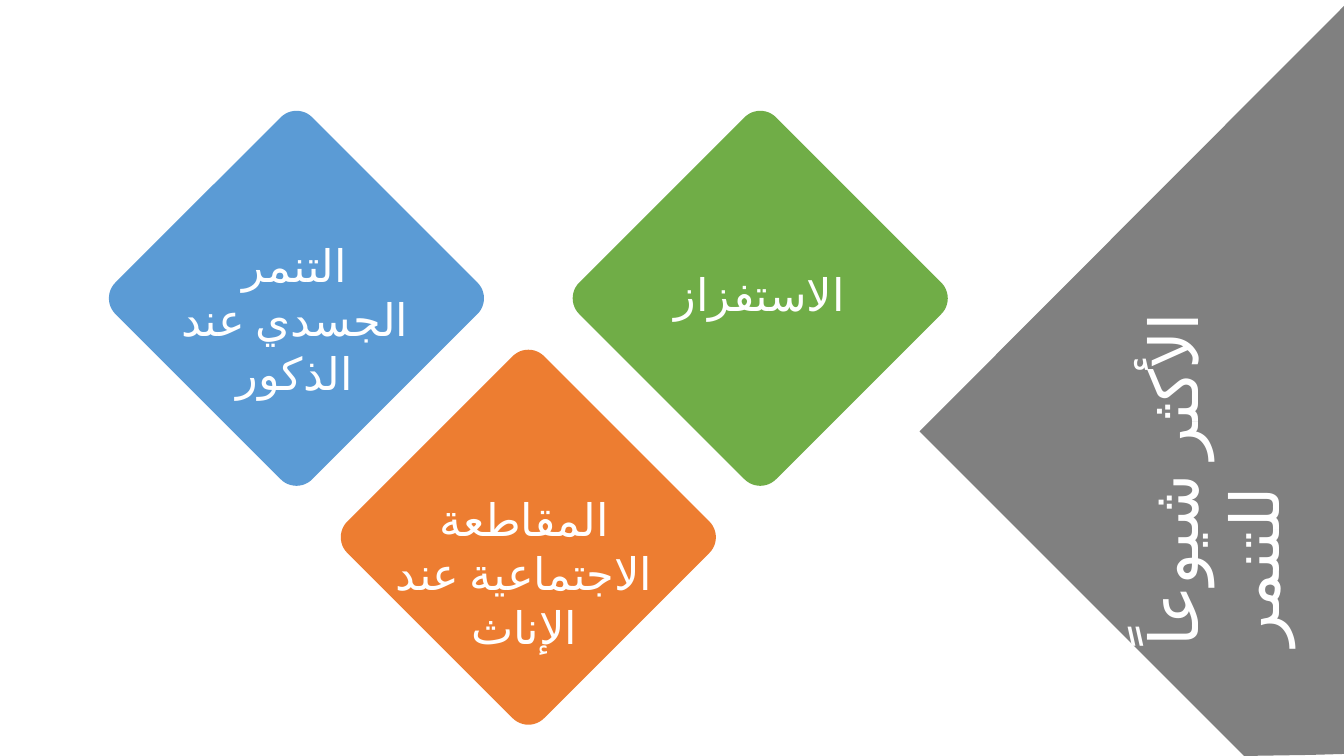
from lxml.etree import SubElement
from pptx import Presentation
from pptx.dml.color import RGBColor
from pptx.enum.lang import MSO_LANGUAGE_ID
from pptx.enum.shapes import MSO_SHAPE
from pptx.enum.text import MSO_AUTO_SIZE, PP_ALIGN
from pptx.oxml.ns import qn
from pptx.util import Pt

EMU_PER_PX = 9144
FONT = "Calibri"
WHITE = RGBColor(0xFF, 0xFF, 0xFF)
GRAY = RGBColor(0x80, 0x80, 0x80)
ORANGE = RGBColor(0xED, 0x7D, 0x31)
GREEN = RGBColor(0x70, 0xAD, 0x47)
BLUE = RGBColor(0x5B, 0x9B, 0xD5)

DIAMOND_SIDE = 276
DIAMOND_LEFT = 156
DIAMOND_TOP = 158
DIAMOND_STEP_X = 230
DIAMOND_STEP_Y = 237
DIAMONDS = [(0, 0, BLUE), (1, 1, ORANGE), (2, 0, GREEN)]

LABELS = [
    (["التنمر", "الجسدي عند", "الذكور"], (169, 231, 247, 141)),
    (["المقاطعة", "الاجتماعية عند", "الإناث"], (378, 483, 284, 118)),
    (["الاستفزاز"], (659, 260, 189, 64)),
]
TITLE = ["الأكثر شيوعاً", "للتنمر"]
TITLE_BOX = (1117, 188, 101, 463)
TITLE_PANEL = [(1333, 6), (1333, 748), (1299, 749), (1234, 750), (912, 428)]


def px(*lengths):
    return [length * EMU_PER_PX for length in lengths]


def paint(shape, color):
    shape.shadow.inherit = False
    shape.fill.solid()
    shape.fill.fore_color.rgb = color
    shape.line.fill.background()


def add_panel(page, points):
    builder = page.shapes.build_freeform(*points[0], scale=EMU_PER_PX)
    builder.add_line_segments(points[1:], close=True)
    paint(builder.convert_to_shape(), GRAY)


def add_diamond(page, column, row, color):
    left = DIAMOND_LEFT + column * DIAMOND_STEP_X
    top = DIAMOND_TOP + row * DIAMOND_STEP_Y
    diamond = page.shapes.add_shape(
        MSO_SHAPE.ROUNDED_RECTANGLE, *px(left, top, DIAMOND_SIDE, DIAMOND_SIDE)
    )
    diamond.adjustments[0] = 0.08
    diamond.rotation = 45
    paint(diamond, color)


def add_text(page, lines, bounds, size, alignment):
    frame = page.shapes.add_textbox(*px(*bounds)).text_frame
    frame.word_wrap = True
    frame.auto_size = MSO_AUTO_SIZE.SHAPE_TO_FIT_TEXT
    para = frame.paragraphs[0]
    para.alignment = alignment
    para.text = "\v".join(lines)
    text_format = {
        "name": FONT,
        "size": Pt(size),
        "language_id": MSO_LANGUAGE_ID.ARABIC,
    }
    for span in para.runs:
        for name, value in text_format.items():
            setattr(span.font, name, value)
        span.font.color.rgb = WHITE
        SubElement(span.font._element, qn("a:cs"), typeface=FONT)
    return frame


def add_label(page, lines, bounds):
    frame = add_text(page, lines, bounds, 32, PP_ALIGN.CENTER)
    frame.paragraphs[0]._p.get_or_add_pPr().set("rtl", "1")


def add_title(page, lines, bounds):
    frame = add_text(page, lines, bounds, 48, PP_ALIGN.LEFT)
    frame._txBody.bodyPr.set("vert", "vert270")


def main():
    deck = Presentation()
    deck.slide_width, deck.slide_height = px(1333, 750)
    page = deck.slides.add_slide(deck.slide_layouts[6])
    add_panel(page, TITLE_PANEL)
    for column, row, color in DIAMONDS:
        add_diamond(page, column, row, color)
    for lines, bounds in LABELS:
        add_label(page, lines, bounds)
    add_title(page, TITLE, TITLE_BOX)
    deck.save("out.pptx")


if __name__ == "__main__":
    main()
